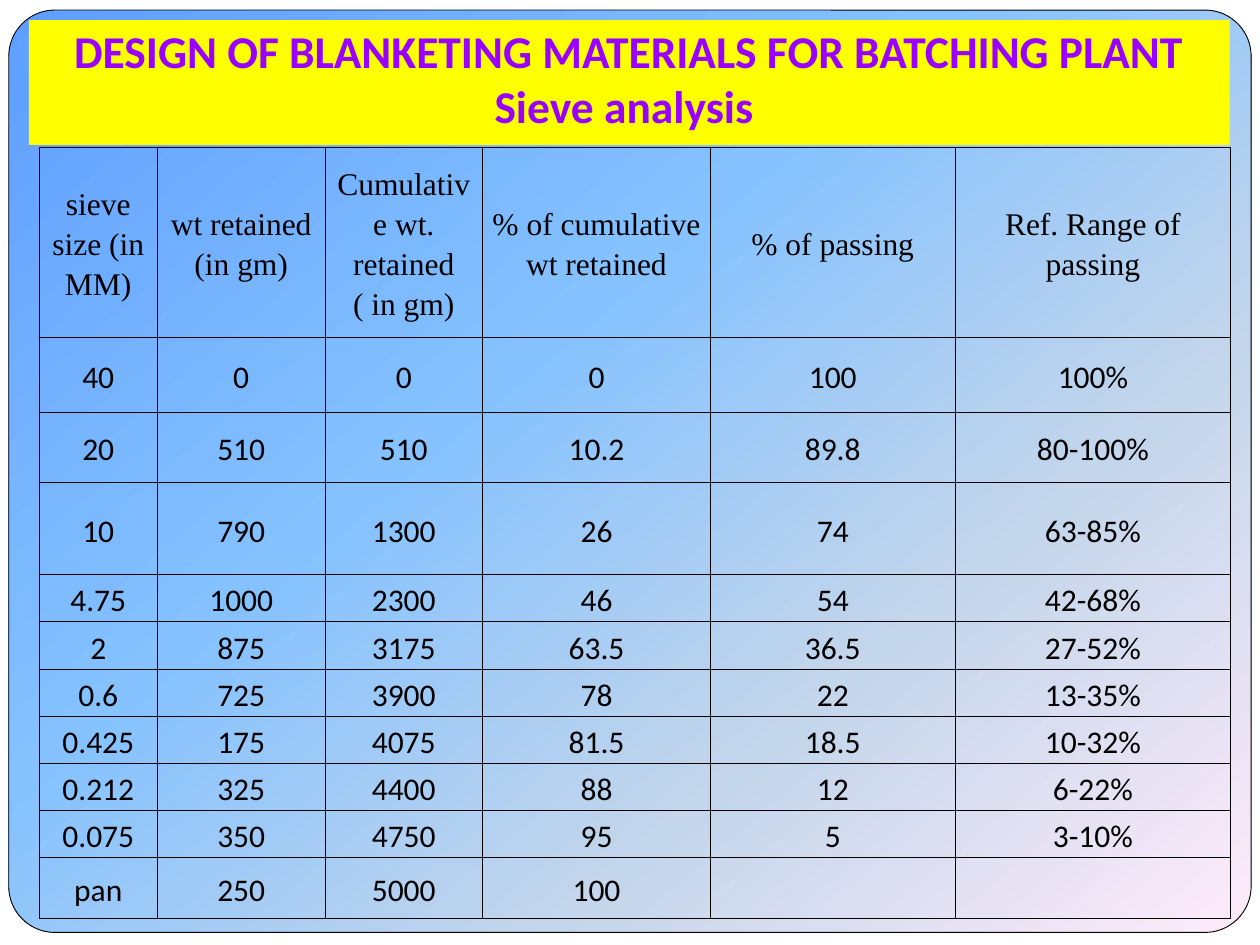
from dataclasses import dataclass

from lxml.etree import SubElement
from pptx import Presentation
from pptx.dml.color import RGBColor
from pptx.enum.shapes import MSO_SHAPE
from pptx.enum.text import MSO_ANCHOR, PP_ALIGN
from pptx.oxml import parse_xml
from pptx.oxml.ns import nsdecls, qn
from pptx.util import Inches, Pt


@dataclass(frozen=True)
class Theme:
    white: str = "FFFFFF"
    ink: str = "000000"
    band: str = "FFFF00"
    title: str = "9900FF"
    grad: tuple = ((0, "5E9EFF"), (40, "85C2FF"), (70, "C4D6EB"), (100, "FFEBFA"))
    angle: int = 50
    sans: str = "Calibri"
    serif: str = "Times New Roman"
    head_size: int = 26
    cell_size: int = 18
    rule: float = 0.5


TITLE = ["DESIGN OF BLANKETING MATERIALS FOR BATCHING PLANT", "Sieve analysis "]
COLS = [0.94, 1.33, 1.25, 1.81, 1.94, 2.19]
ROWS = [1.51, 0.59, 0.56, 0.73] + [0.375] * 6 + [0.48]
DATA = [
    ["sieve size (in MM)", "wt retained (in gm)", "Cumulative wt. retained ( in gm)",
     "% of cumulative wt retained", "% of passing", "Ref. Range of passing"],
    ["40", "0", "0", "0", "100", "100%"],
    ["20", "510", "510", "10.2", "89.8", "80-100%"],
    ["10", "790", "1300", "26", "74", "63-85%"],
    ["4.75", "1000", "2300", "46", "54", "42-68%"],
    ["2", "875", "3175", "63.5", "36.5", "27-52%"],
    ["0.6", "725", "3900", "78", "22", "13-35%"],
    ["0.425", "175", "4075", "81.5", "18.5", "10-32%"],
    ["0.212", "325", "4400", "88", "12", "6-22%"],
    ["0.075", "350", "4750", "95", "5", "3-10%"],
    ["pan", "250", "5000", "100", "", ""],
]


def write(frame, lines, *, font, size, color, bold=False, space=1.0):
    """Fill a text frame with one centred paragraph, broken between lines."""
    frame.word_wrap = True
    para = frame.paragraphs[0]
    para.alignment = PP_ALIGN.CENTER
    para.line_spacing = space
    for i, line in enumerate(lines):
        if i:
            para.add_line_break()
        run = para.add_run()
        run.text = line
        run.font.name = font
        run.font.size = Pt(size)
        run.font.bold = bold
        run.font.color.rgb = RGBColor.from_string(color)


class Deck:
    def __init__(self, theme):
        self.theme = theme
        self.file = Presentation()
        self.file.slide_width = Inches(10)
        self.file.slide_height = Inches(7.5)
        self.slide = self.file.slides.add_slide(self.file.slide_layouts[6])

    def box(self, left, top, width, height, color=None, kind=MSO_SHAPE.RECTANGLE):
        shape = self.slide.shapes.add_shape(
            kind, Inches(left), Inches(top), Inches(width), Inches(height))
        shape.shadow.inherit = False
        shape.line.fill.background()
        if color:
            shape.fill.solid()
            shape.fill.fore_color.rgb = RGBColor.from_string(color)
        return shape

    def panel(self, *area):
        """Draw the rounded panel with its gradient and thin outline."""
        theme = self.theme
        shape = self.box(*area, kind=MSO_SHAPE.ROUNDED_RECTANGLE)
        shape.adjustments[0] = 0.05
        shape.line.color.rgb = RGBColor.from_string(theme.ink)
        shape.line.width = Pt(theme.rule)
        shape.fill.gradient()
        shape.fill.gradient_angle = 360 - theme.angle
        stops = shape._element.spPr.find(qn("a:gradFill")).find(qn("a:gsLst"))
        for stop in list(stops):
            stops.remove(stop)
        for place, color in theme.grad:
            stop = SubElement(stops, qn("a:gs"), pos=str(place * 1000))
            SubElement(stop, qn("a:srgbClr"), val=color)

    def title(self, lines, *area):
        theme = self.theme
        frame = self.box(*area, theme.band).text_frame
        frame.vertical_anchor = MSO_ANCHOR.BOTTOM
        frame.margin_bottom = Inches(0.1)
        write(frame, lines, font=theme.sans, size=theme.head_size,
              color=theme.title, bold=True)

    def table(self, data, cols, rows, left, top):
        theme = self.theme
        table = self.slide.shapes.add_table(
            len(rows), len(cols), Inches(left), Inches(top),
            Inches(sum(cols)), Inches(sum(rows))).table
        table.first_row = table.horz_banding = False
        for col, width in zip(table.columns, cols):
            col.width = Inches(width)
        for r, height in enumerate(rows):
            table.rows[r].height = Inches(height)
            font = theme.sans if r else theme.serif
            for c, text in enumerate(data[r]):
                cell = table.cell(r, c)
                cell.vertical_anchor = MSO_ANCHOR.MIDDLE
                cell.margin_left = cell.margin_right = Inches(0.07)
                cell.margin_top = cell.margin_bottom = 0
                cell.fill.background()
                self.edge(cell)
                if text:
                    write(cell.text_frame, [text], font=font,
                          size=theme.cell_size, color=theme.ink, space=1.15)

    def edge(self, cell):
        """Rule all four sides of a cell."""
        props = cell._tc.get_or_add_tcPr()
        for i, side in enumerate("LRTB"):
            props.insert(i, parse_xml(
                f'<a:ln{side} {nsdecls("a")} w="{Pt(self.theme.rule)}"><a:solidFill>'
                f'<a:srgbClr val="{self.theme.ink}"/></a:solidFill></a:ln{side}>'))


def main():
    theme = Theme()
    deck = Deck(theme)
    deck.box(0, 0, 10, 7.5, theme.white)
    deck.panel(0.07, 0.08, 9.86, 7.32)
    deck.table(DATA, COLS, ROWS, 0.31, 1.17)
    deck.title(TITLE, 0.23, 0.16, 9.53, 0.99)
    deck.file.save("out.pptx")


if __name__ == "__main__":
    main()
